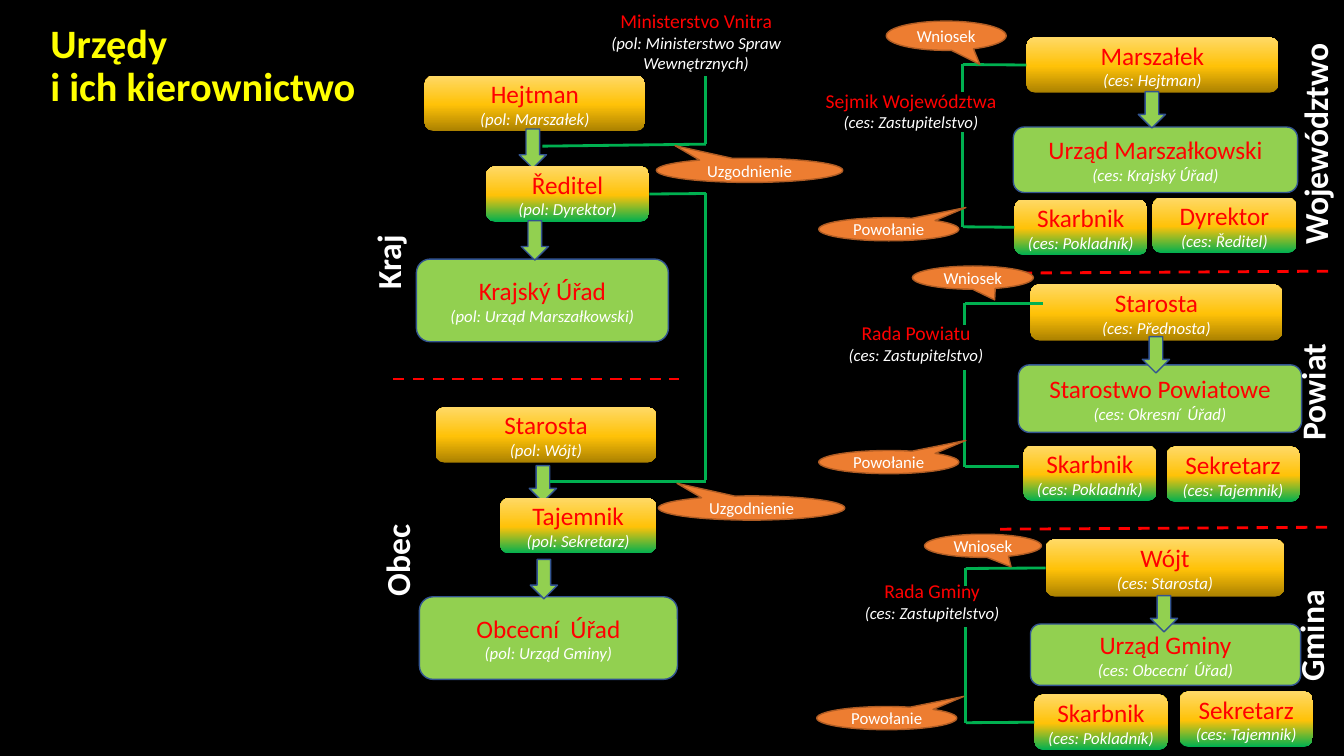
from dataclasses import dataclass
from copy import deepcopy

from lxml import etree
from pptx import Presentation
from pptx.dml.color import RGBColor
from pptx.enum.dml import MSO_LINE
from pptx.enum.shapes import MSO_CONNECTOR, MSO_SHAPE
from pptx.enum.text import MSO_ANCHOR, PP_ALIGN
from pptx.oxml.ns import qn
from pptx.util import Inches, Pt

ROUND = MSO_SHAPE.ROUNDED_RECTANGLE
ARROW = MSO_SHAPE.DOWN_ARROW
BUBBLE = MSO_SHAPE.OVAL_CALLOUT
STRAIGHT = MSO_CONNECTOR.STRAIGHT
DASH = MSO_LINE.DASH
MIDDLE, TOP = MSO_ANCHOR.MIDDLE, MSO_ANCHOR.TOP
CENTER, LEFT = PP_ALIGN.CENTER, PP_ALIGN.LEFT
LEFT_SIDE, RIGHT_SIDE = 1, 3


@dataclass(frozen=True)
class Theme:
    font: str = "Calibri"
    back: str = "000000"
    white: str = "FFFFFF"
    yellow: str = "FFFF00"
    red: str = "FF0000"
    green: str = "00B050"
    lime: str = "92D050"
    blue: str = "325491"
    orange: str = "ED7D31"
    rust: str = "AF5C24"
    brown: str = "AB8100"
    gold: str = "FFC208"
    cream: str = "FFD966"
    title: float = 28.8
    label: float = 24
    name: float = 18
    council: float = 14
    note: float = 12
    edge: float = 1
    rule: float = 2


def color(code):
    return RGBColor.from_string(code)


def write(frame, text, *, font, size, tint, bold=False, italic=False,
          align=CENTER, anchor=MIDDLE, wrap=True, spacing=None, more=False):
    frame.word_wrap = wrap
    frame.vertical_anchor = anchor
    para = frame.add_paragraph() if more else frame.paragraphs[0]
    para.text = text
    para.alignment = align
    para.line_spacing = spacing
    for run in para.runs:
        run.font.name = font
        run.font.size = Pt(size)
        run.font.bold = bold
        run.font.italic = italic
        run.font.color.rgb = color(tint)


class Chart:
    def __init__(self, slide, theme):
        self.slide = slide
        self.theme = theme
        slide.background.fill.solid()
        slide.background.fill.fore_color.rgb = color(theme.back)

    def shape(self, kind, box, fill=None, edge=None):
        shape = self.slide.shapes.add_shape(kind, *map(Inches, box))
        shape.shadow.inherit = False
        if fill:
            shape.fill.solid()
            shape.fill.fore_color.rgb = color(fill)
        else:
            shape.fill.background()
        if edge:
            shape.line.color.rgb = color(edge)
            shape.line.width = Pt(self.theme.edge)
        else:
            shape.line.fill.background()
        return shape

    def pair(self, shape, name, note, size):
        look = self.theme
        write(shape.text_frame, name, font=look.font, size=size, tint=look.red)
        write(shape.text_frame, note, font=look.font, size=look.note,
              tint=look.white, italic=True, more=True)
        return shape

    def office(self, name, note, *box):
        shape = self.shape(ROUND, box, self.theme.lime, self.theme.blue)
        return self.pair(shape, name, note, self.theme.name)

    def council(self, name, note, *box):
        return self.pair(self.shape(ROUND, box), name, note, self.theme.council)

    def person(self, base, name, note, *box):
        shape = self.shape(ROUND, box)
        shape.fill.gradient()
        shape.fill.gradient_angle = 90
        stops = shape._element.spPr.find(qn("a:gradFill")).find(qn("a:gsLst"))
        stops.insert(1, deepcopy(stops[0]))
        shades = ((0, base), (0.48, self.theme.gold), (1, self.theme.cream))
        for stop, (place, tint) in zip(shape.fill.gradient_stops, shades):
            stop.position = place
            stop.color.rgb = color(tint)
        return self.pair(shape, name, note, self.theme.name)

    def chief(self, *parts):
        return self.person(self.theme.brown, *parts)

    def deputy(self, *parts):
        return self.person(self.theme.green, *parts)

    def arrow(self, left, top, height):
        self.shape(ARROW, (left, top, 0.27, height), self.theme.lime, self.theme.blue)

    def bubble(self, text, tip, *box):
        shape = self.shape(BUBBLE, box, self.theme.orange, self.theme.rust)
        shape.adjustments[0], shape.adjustments[1] = tip
        write(shape.text_frame, text, font=self.theme.font,
              size=self.theme.note, tint=self.theme.white, wrap=False)

    def line(self, start, end, tint, dash=None, join=None, side=LEFT_SIDE):
        line = self.slide.shapes.add_connector(STRAIGHT, *map(Inches, start + end))
        line.line.color.rgb = color(tint)
        line.line.width = Pt(self.theme.rule)
        if dash:
            line.line.dash_style = dash
        etree.SubElement(line._element.spPr, qn("a:effectLst"))
        if join:
            line.begin_connect(join, side)

    def text(self, text, box, turn=0, **style):
        shape = self.slide.shapes.add_textbox(*map(Inches, box))
        shape.rotation = turn
        write(shape.text_frame, text, font=self.theme.font, bold=True, **style)


def czech(chart):
    look = chart.theme
    chart.office("Obcecní  Úřad", "(pol: Urząd Gminy)", 4.16, 5.92, 2.56, 0.82)
    chart.office("Krajský Úřad", "(pol: Urząd Marszałkowski)", 4.13, 2.57, 2.5, 0.82)
    chart.chief("Starosta", "(pol: Wójt)", 4.32, 4.04, 2.19, 0.55)
    chart.chief("Hejtman", "(pol: Marszałek)", 4.21, 0.75, 2.19, 0.55)
    chart.arrow(5.15, 1.28, 0.39)
    chart.arrow(5.25, 4.62, 0.36)
    head = chart.deputy("Ředitel", "(pol: Dyrektor)", 4.82, 1.65, 1.62, 0.55)
    chart.arrow(5.17, 2.19, 0.39)
    chart.deputy("Tajemnik", "(pol: Sekretarz)", 4.96, 4.94, 1.55, 0.55)
    chart.arrow(5.26, 5.55, 0.39)
    chart.line((5.45, 4.78), (7, 4.78), look.green)
    chart.line((7, 4.76), (7, 1.91), look.green)
    chart.line((6.44, 1.92), (7, 1.92), look.green, join=head, side=RIGHT_SIDE)
    chart.line((5.38, 1.45), (7, 1.43), look.green)
    chart.line((7, 1.43), (7, 0.75), look.green)
    chart.council("Ministerstvo Vnitra", "(pol: Ministerstwo Spraw Wewnętrznych)",
                  5.81, 0.09, 2.19, 0.63)
    for left, top in ((6.51, 1.57), (6.53, 4.92)):
        chart.bubble("Uzgodnienie", (-0.4, -1.02), left, top, 1.85, 0.24)


def polish(chart, chief, office, council, purse, aide, arrow, ask, tip, name,
           wire, gap, ends, joins):
    chart.office(*office)
    top = chart.chief(*chief)
    chart.arrow(*arrow, 0.36)
    chart.council(*council, 2.19, 0.63)
    chart.deputy(*aide, 0.55)
    low = chart.deputy("Skarbnik", "(ces: Pokladník)", *purse, 1.32, 0.55)
    for end, box, join in zip(ends, (top, low), joins):
        chart.line(end, (wire, end[1]), chart.theme.green, join=box if join else None)
    for end, stop in zip(ends, gap):
        chart.line((wire, end[1]), (wire, stop), chart.theme.green)
    chart.bubble("Wniosek", tip, *ask)
    chart.bubble("Powołanie", (0.55, -0.94), *name, 1.39, 0.23)


def main():
    deck = Presentation()
    deck.slide_width, deck.slide_height = Inches(13.33), Inches(7.5)
    look = Theme()
    chart = Chart(deck.slides.add_slide(deck.slide_layouts[6]), look)
    chart.text("Urzędy\vi ich kierownictwo", (0.4, 0.18, 3.25, 0.97),
               size=look.title, tint=look.yellow, align=LEFT, spacing=0.9)
    czech(chart)
    for start, end in (((3.9, 3.76), (6.73, 3.76)), ((9.93, 2.71), (13.23, 2.69)),
                       ((9.92, 5.25), (13.22, 5.23))):
        chart.line(start, end, look.red, dash=DASH)
    polish(chart, ("Marszałek", "(ces: Hejtman)", 10.18, 0.37, 2.5, 0.55),
           ("Urząd Marszałkowski", "(ces: Krajský Úřad)", 10.05, 1.26, 2.82, 0.65),
           ("Sejmik Województwa", "(ces: Zastupitelstvo)", 7.94, 0.78),
           (10.06, 1.98), ("Dyrektor", "(ces: Ředitel)", 11.43, 1.96, 1.43),
           (11.29, 0.91), (8.79, 0.21, 1.19, 0.29), (0.28, 0.98), (8.12, 2.16),
           9.55, (0.91, 1.31), ((10.18, 0.64), (10.06, 2.25)), (True, True))
    polish(chart, ("Starosta", "(ces: Přednosta)", 10.22, 2.82, 2.5, 0.56),
           ("Starostwo Powiatowe", "(ces: Okresní  Úřad)", 10.1, 3.62, 2.81, 0.67),
           ("Rada Powiatu", "(ces: Zastupitelstvo)", 7.99, 3.09),
           (10.15, 4.42), ("Sekretarz", "(ces: Tajemnik)", 11.57, 4.43, 1.32),
           (11.33, 3.34), (9.05, 2.64, 1.2, 0.23), (0.18, 0.96), (8.12, 4.47),
           9.57, (3.22, 3.67), ((10.34, 3.01), (10.11, 4.63)), (False, False))
    polish(chart, ("Wójt", "(ces: Starosta)", 10.37, 5.35, 2.37, 0.57),
           ("Urząd Gminy", "(ces: Obcecní  Úřad)", 10.22, 6.19, 2.68, 0.61),
           ("Rada Gminy", "(ces: Zastupitelstvo)", 8.15, 5.65),
           (10.26, 6.89), ("Sekretarz", "(ces: Tajemnik)", 11.7, 6.86, 1.32),
           (11.41, 5.91), (9.17, 5.3, 1.16, 0.23), (0.24, 0.91), (8.1, 7.01),
           9.58, (5.81, 6.22), ((10.37, 5.64), (10.26, 7.17)), (True, True))
    for name, *box in (("Kraj", 3.47, 2.35, 0.75), ("Obec", 3.44, 5.31, 0.99),
                       ("Województwo", 11.93, 1.18, 2.22),
                       ("Powiat", 12.43, 3.64, 1.17), ("Gmina", 12.44, 6.06, 1.12)):
        chart.text(name, (*box, 0.5), turn=270, size=look.label,
                   tint=look.white, anchor=TOP, wrap=False)
    deck.save("out.pptx")


if __name__ == "__main__":
    main()
